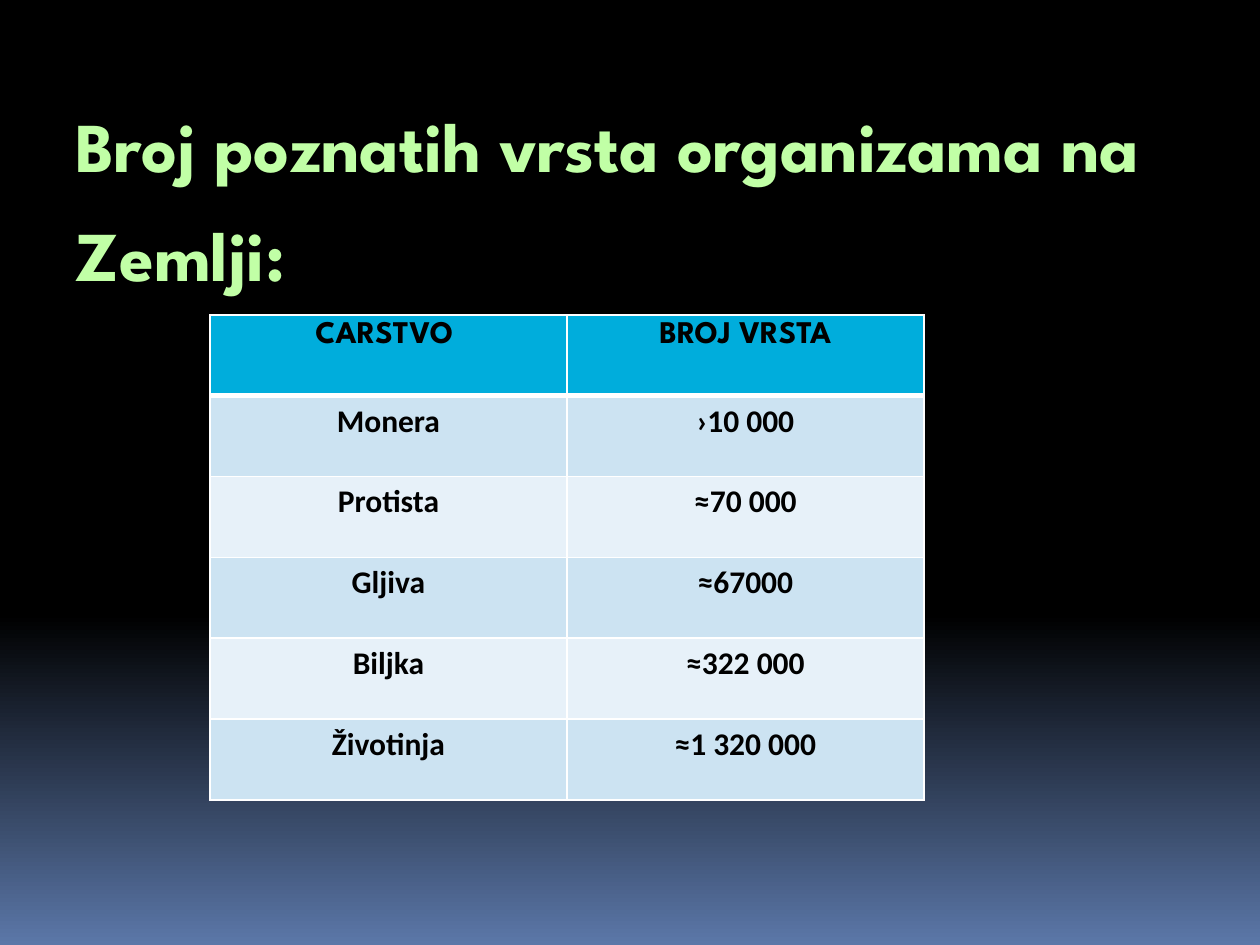
from lxml import etree
from pptx import Presentation
from pptx.dml.color import RGBColor
from pptx.enum.text import MSO_ANCHOR, PP_ALIGN
from pptx.oxml.ns import qn
from pptx.util import Pt

LEFT, MID, TOP = PP_ALIGN.LEFT, PP_ALIGN.CENTER, MSO_ANCHOR.TOP
HEAD, BODY = "League Spartan", "Calibri"
INK = {"night": "000000", "dusk": "5B77A8", "title": "C1FFA6", "text": "000000",
       "head": "00ADDC", "odd": "CCE3F2", "even": "E7F1F9", "line": "FFFFFF"}


def color(name):
    return RGBColor.from_string(INK[name])


def write(frame, text, font=BODY, size=18, ink="text", align=MID, space=1.0):
    frame.word_wrap = True
    para = frame.paragraphs[0]
    para.alignment = align
    para.line_spacing = space
    run = para.add_run()
    run.text = text
    run.font.name = font
    run.font.size = Pt(size)
    run.font.bold = True
    run.font.color.rgb = color(ink)


def edge(cell, side, width):
    props = cell._tc.get_or_add_tcPr()
    line = etree.SubElement(props, qn("a:ln" + side), w=str(Pt(width)))
    fill = etree.SubElement(line, qn("a:solidFill"))
    etree.SubElement(fill, qn("a:srgbClr"), val=INK["line"])


deck = Presentation()
deck.slide_width, deck.slide_height = Pt(720), Pt(540)
slide = deck.slides.add_slide(deck.slide_layouts[6])

# Background: black, fading to blue at the foot
back = slide.background.fill
back.gradient()
back.gradient_angle = 270
for stop, (place, name) in zip(back.gradient_stops, [(0.65, "night"), (1, "dusk")]):
    stop.position = place
    stop.color.rgb = color(name)

# Title
title = slide.shapes.add_textbox(Pt(36), Pt(40.5), Pt(648), Pt(72)).text_frame
title.vertical_anchor = TOP
write(title, "Broj poznatih vrsta organizama na Zemlji:", font=HEAD, size=40,
      ink="title", align=LEFT, space=1.3)

# Table of kingdoms
rows = [("CARSTVO ", "BROJ VRSTA"),
        ("Monera", "›10 000"),
        ("Protista", "≈70 000"),
        ("Gljiva", "≈67000"),
        ("Biljka", "≈322 000"),
        ("Životinja", "≈1 320 000")]
table = slide.shapes.add_table(len(rows), 2, Pt(120), Pt(180), Pt(408), Pt(277.2)).table
for r, row in enumerate(rows):
    shade = "head" if r == 0 else "odd" if r % 2 else "even"
    for c, text in enumerate(row):
        cell = table.cell(r, c)
        write(cell.text_frame, text, font=BODY if r else HEAD)
        for side in "LRTB":
            thick = (r, side) in [(0, "B"), (1, "T")]
            edge(cell, side, 3 if thick else 1)
        cell.fill.solid()
        cell.fill.fore_color.rgb = color(shade)

deck.save("out.pptx")
